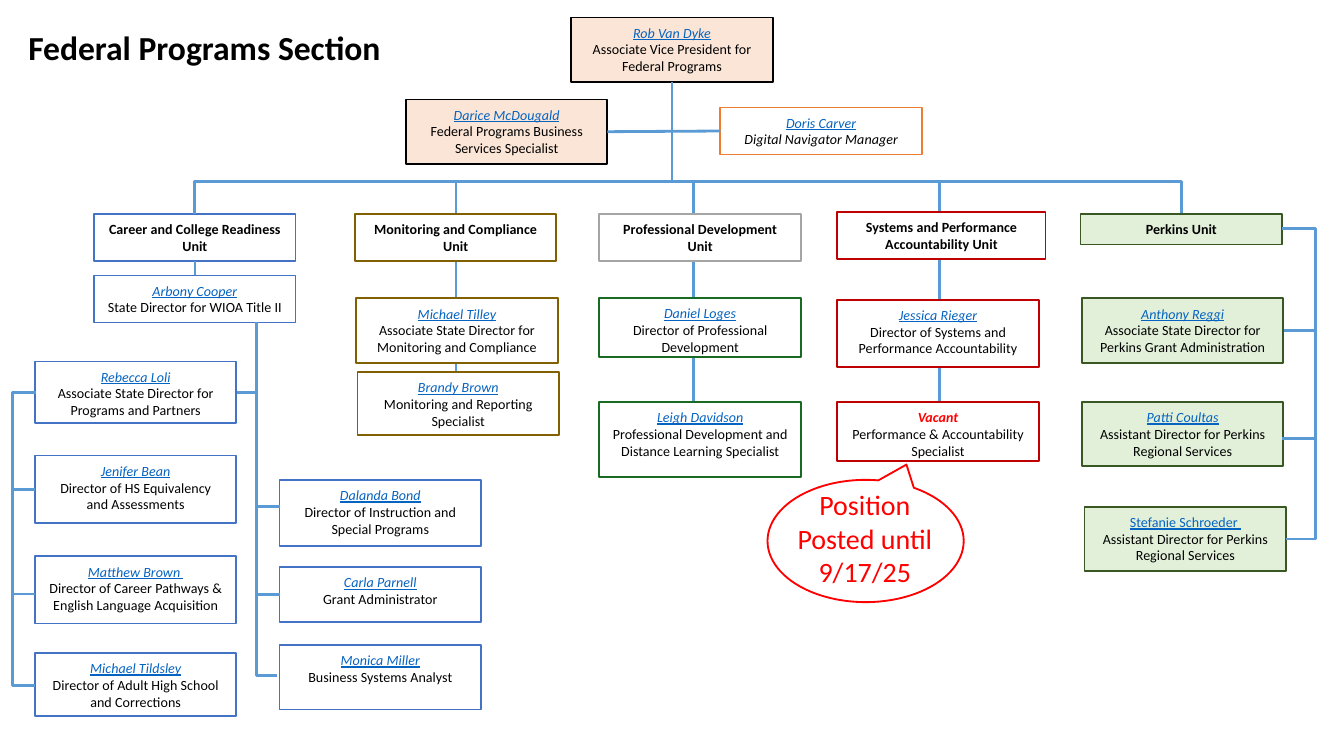
"""Build the Federal Programs Section organisation chart."""
import lxml.etree
import pptx
import pptx.dml.color
import pptx.enum.shapes
import pptx.enum.text
import pptx.oxml.ns
import pptx.util

Inches = pptx.util.Inches
Pt = pptx.util.Pt
CONNECTOR = pptx.enum.shapes.MSO_CONNECTOR
SHAPE = pptx.enum.shapes.MSO_SHAPE
ALIGN = pptx.enum.text.PP_ALIGN

FONT = "Calibri"
BOX_WIDTH = 1.5
TRUNK_Y = 1.34
LEFT_RAIL, MIDDLE_RAIL, RIGHT_RAIL = 0.09, 1.9, 9.79
TITLE = "Federal Programs Section"
NOTICE = "Position Posted until 9/17/25"
COLORS = {
    "text": "000000", "link": "0563C1", "alert": "FF0000", "connector": "5B9BD5",
    "white": "FFFFFF", "peach": "FBE5D6", "mint": "E2F0D9",
    "black": "000000", "orange": "ED7D31", "blue": "4472C4", "olive": "806000",
    "gray": "A5A5A5", "green": "196B24", "red": "C00000", "forest": "385723",
}

UNITS = [
    ("Career and College Readiness Unit", 0.7, 1.59, 1.5, 0.35, "blue", "white"),
    ("Monitoring and Compliance Unit", 2.64, 1.59, 1.5, 0.35, "olive", "white"),
    ("Professional Development Unit", 4.46, 1.59, 1.5, 0.35, "gray", "white"),
    ("Systems and Performance Accountability Unit", 6.23, 1.58, 1.55, 0.35, "red", "white"),
    ("Perkins Unit", 8.04, 1.59, 1.5, 0.23, "forest", "mint"),
]
STAFF = [
    ("black", "peach", [
        ("Rob Van Dyke", "Associate Vice President for Federal Programs", 4.25, 0.13, 0.48),
        ("Darice McDougald", "Federal Programs Business Services Specialist", 3.02, 0.74, 0.48),
    ]),
    ("orange", "white", [
        ("Doris Carver", "Digital Navigator Manager", 5.36, 0.8, 0.35),
    ]),
    ("blue", "white", [
        ("Arbony Cooper", "State Director for WIOA Title II", 0.7, 2.05, 0.35),
        ("Rebecca Loli", "Associate State Director for Programs and Partners", 0.26, 2.69, 0.46),
        ("Jenifer Bean", "Director of HS Equivalency and Assessments", 0.26, 3.39, 0.5),
        ("Matthew Brown ", "Director of Career Pathways & English Language Acquisition", 0.26, 4.14, 0.5),
        ("Michael Tildsley", "Director of Adult High School and Corrections", 0.26, 4.86, 0.47),
        ("Dalanda Bond", "Director of Instruction and Special Programs", 2.08, 3.57, 0.49),
        ("Carla Parnell", "Grant Administrator", 2.08, 4.22, 0.41),
        ("Monica Miller", "Business Systems Analyst", 2.08, 4.8, 0.48),
    ]),
    ("olive", "white", [
        ("Michael Tilley", "Associate State Director for Monitoring and Compliance", 2.65, 2.22, 0.48),
        ("Brandy Brown", "Monitoring and Reporting Specialist", 2.66, 2.77, 0.47),
    ]),
    ("green", "white", [
        ("Daniel Loges", "Director of Professional Development", 4.46, 2.22, 0.44),
        ("Leigh Davidson", "Professional Development and Distance Learning Specialist", 4.46, 2.99, 0.56),
    ]),
    ("red", "white", [
        ("Jessica Rieger", "Director of Systems and Performance Accountability", 6.23, 2.23, 0.5),
        ("Vacant", "Performance & Accountability Specialist", 6.23, 2.99, 0.44),
    ]),
    ("forest", "mint", [
        ("Anthony Reggi", "Associate State Director for Perkins Grant Administration", 8.05, 2.22, 0.48),
        ("Patti Coultas", "Assistant Director for Perkins Regional Services", 8.05, 2.99, 0.48),
        ("Stefanie Schroeder ", "Assistant Director for Perkins Regional Services", 8.07, 3.77, 0.48),
    ]),
]
NAME_STYLES = {
    "Stefanie Schroeder ": {"color": "link", "underline": True},
    "Vacant": {"color": "alert", "bold": True, "italic": True},
}
LINK_STYLE = {"color": "link", "italic": True, "underline": True}
ITALIC_ROLES = {"Digital Navigator Manager"}

DROPS = [(3.39, 2.88, 1), (5.16, 3.52, 1.5), (6.99, 3.33, 1.5)]
STUBS = [
    (MIDDLE_RAIL, 3.77, 2.08),
    (LEFT_RAIL, 4.42, 0.26),
    (RIGHT_RAIL, 3.26, 9.54),
]
RAIL_JOINS = [
    (LEFT_RAIL, "Jenifer Bean", 1),
    (MIDDLE_RAIL, "Rebecca Loli", 3),
    (MIDDLE_RAIL, "Carla Parnell", 1),
    (RIGHT_RAIL, "Anthony Reggi", 3),
]
ELBOWS = [
    ((0.27, 2.92), (0.26, 5.1), LEFT_RAIL),
    ((2.06, 5.03), (1.91, 2.4), 1.91),
    ((9.54, 1.7), (9.57, 4.01), RIGHT_RAIL),
]


def rgb(name):
    return pptx.dml.color.RGBColor.from_string(COLORS[name])


def style(paragraph, size, color="text", align=ALIGN.CENTER, bold=False, italic=False, underline=False):
    paragraph.alignment = align
    for run in paragraph.runs:
        font = run.font
        font.name, font.size, font.color.rgb = FONT, Pt(size), rgb(color)
        font.bold, font.italic, font.underline = bold, italic, underline


def add_box(slide, lines, left, top, width, height, border, fill):
    box = slide.shapes.add_shape(SHAPE.RECTANGLE, *map(Inches, (left, top, width, height)))
    box.shadow.inherit = False
    box.fill.solid()
    box.fill.fore_color.rgb = rgb(fill)
    box.line.color.rgb, box.line.width = rgb(border), Pt(1)
    frame = box.text_frame
    frame.word_wrap = True
    frame.vertical_anchor = pptx.enum.text.MSO_ANCHOR.TOP
    frame.text = "\n".join(text for text, _ in lines)
    for paragraph, (_, look) in zip(frame.paragraphs, lines):
        style(paragraph, 7.5, **look)
    return box


def add_line(slide, start, end, weight=1.5, kind=CONNECTOR.STRAIGHT):
    line = slide.shapes.add_connector(kind, *map(Inches, (*start, *end)))
    line.line.color.rgb, line.line.width = rgb("connector"), Pt(weight)
    lxml.etree.SubElement(line.element.spPr, pptx.oxml.ns.qn("a:effectLst"))
    return line


def add_elbow(slide, start, end, ratio):
    elbow = add_line(slide, start, end, kind=CONNECTOR.ELBOW)
    guides = elbow.element.xpath(".//a:avLst")[0]
    lxml.etree.SubElement(guides, pptx.oxml.ns.qn("a:gd"), name="adj1", fmla=f"val {round(ratio * 100000)}")
    return elbow


def add_unit_trunk(slide, left, right, base):
    middle, half, thin = (left + right) / 2, (right - left) / 2, 0.01
    start, end = (middle + thin / 2, base + half), (middle - thin / 2, base - half)
    trunk = add_elbow(slide, start, end, (base - TRUNK_Y) / thin)
    trunk.element.xpath(".//a:xfrm")[0].set("rot", "5400000")


def add_title(slide):
    title = slide.shapes.title
    title.left, title.top, title.width, title.height = map(Inches, (0.14, 0.16, 2.88, 0.38))
    frame = title.text_frame
    frame.text = TITLE
    frame.word_wrap = True
    frame.auto_size = pptx.enum.text.MSO_AUTO_SIZE.NONE
    frame.vertical_anchor = pptx.enum.text.MSO_ANCHOR.TOP
    frame.margin_left = frame.margin_right = Inches(0.07)
    frame.margin_top = frame.margin_bottom = Inches(0.04)
    style(frame.paragraphs[0], 18, align=ALIGN.LEFT, bold=True)


def add_notice(slide):
    bubble = slide.shapes.add_shape(SHAPE.OVAL_CALLOUT, *map(Inches, (5.71, 3.57, 1.46, 0.91)))
    bubble.rotation = 180
    bubble.shadow.inherit = False
    bubble.fill.background()
    bubble.line.color.rgb, bubble.line.width = rgb("alert"), Pt(1)
    notice = slide.shapes.add_textbox(*map(Inches, (5.83, 3.58, 1.21, 0.86)))
    notice.text_frame.word_wrap = True
    notice.text_frame.text = NOTICE
    style(notice.text_frame.paragraphs[0], 15, "alert")


def main():
    deck = pptx.Presentation()
    deck.slide_width, deck.slide_height = Inches(10), Inches(10 * 9 / 16)
    slide = deck.slides.add_slide(deck.slide_layouts[5])
    add_title(slide)
    for x, bottom, weight in DROPS:
        add_line(slide, (x, bottom), (x, TRUNK_Y), weight)

    boxes = {}
    for unit, *place in UNITS:
        boxes[unit] = add_box(slide, [(unit, {"bold": True})], *place)
    for border, fill, people in STAFF:
        for name, role, left, top, height in people:
            lines = [(name, NAME_STYLES.get(name, LINK_STYLE)), (role, {"italic": role in ITALIC_ROLES})]
            boxes[name] = add_box(slide, lines, left, top, BOX_WIDTH, height, border, fill)

    add_line(slide, (5, TRUNK_Y), (5, 0.61)).end_connect(boxes["Rob Van Dyke"], 2)
    for rail, y, edge in STUBS:
        add_line(slide, (rail, y), (edge, y))
    for rail, name, side in RAIL_JOINS:
        box = boxes[name]
        y = (box.top + box.height / 2) / Inches(1)
        add_line(slide, (rail, y), (rail, y)).end_connect(box, side)
    for first, first_side, second, second_side, weight in [
        ("Arbony Cooper", 0, "Career and College Readiness Unit", 2, 1),
        ("Doris Carver", 1, "Darice McDougald", 3, 1.5),
    ]:
        link = add_line(slide, (0, 0), (0, 0), weight)
        link.begin_connect(boxes[first], first_side)
        link.end_connect(boxes[second], second_side)
    for start, end, rail in ELBOWS:
        add_elbow(slide, start, end, (rail - start[0]) / (end[0] - start[0]))
    add_unit_trunk(slide, 1.45, 8.79, 1.59)
    add_notice(slide)
    deck.save("out.pptx")


if __name__ == "__main__":
    main()
